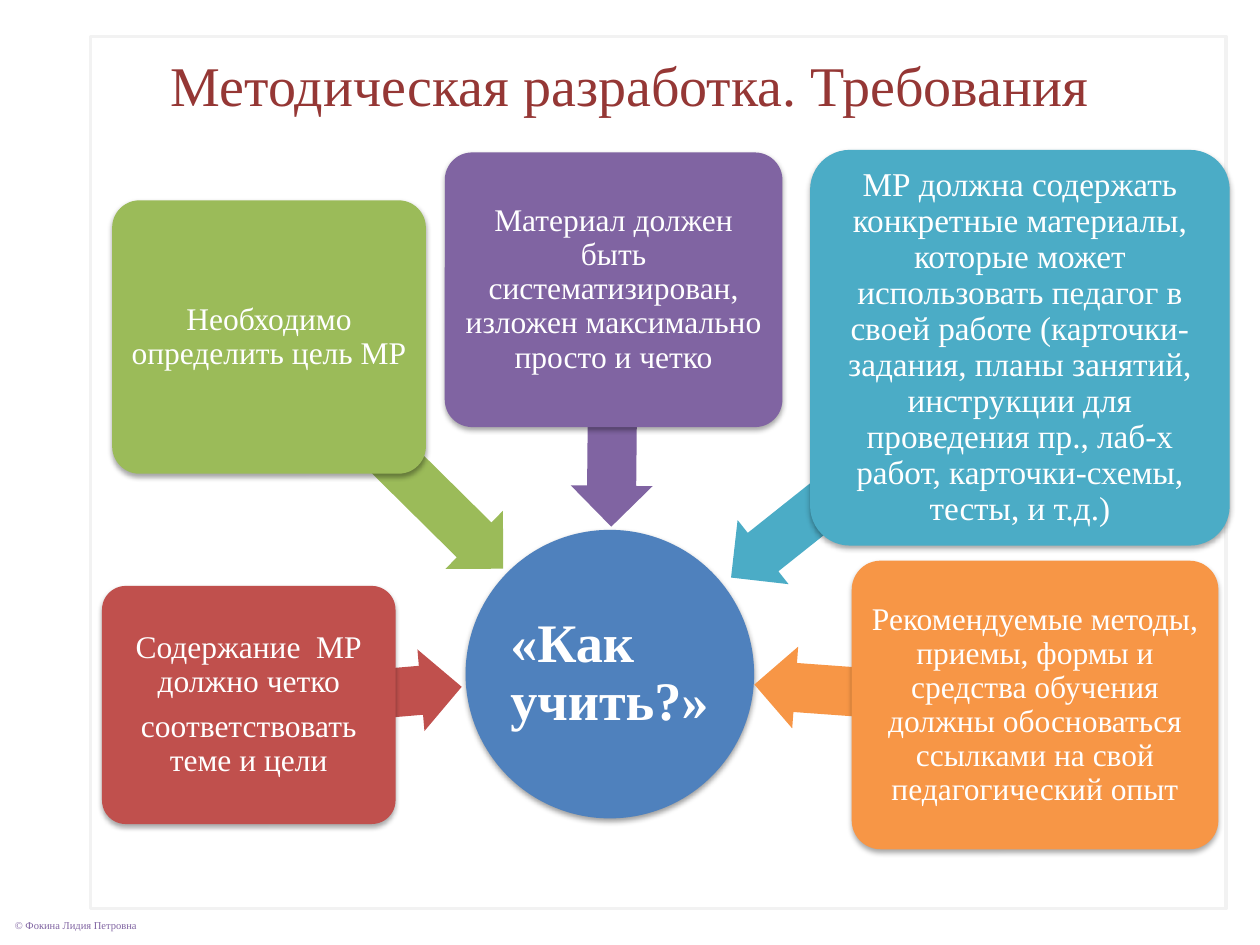
import math
from lxml import etree
from pptx import Presentation, util as u
from pptx.dml.color import RGBColor
from pptx.enum import shapes, text
from pptx.oxml.ns import qn

prs = Presentation()
prs.slide_width, prs.slide_height = u.Inches(10), u.Inches(7.5)
unit = prs.slide_width / 100
s = prs.slides.add_slide(prs.slide_layouts[5])
FONT = "Times New Roman"
WHITE = "FFFFFF"
GEO = shapes.MSO_SHAPE


def add_shape(kind, x, y, w, h, color, shadow=0):
    sp = s.shapes.add_shape(kind, *(round(v * unit) for v in (x, y, w, h)))
    sp.fill.solid()
    sp.fill.fore_color.rgb = RGBColor.from_string(color)
    sp.line.fill.background()
    sp.shadow.inherit = False
    if shadow:
        effects = sp._element.spPr.find(qn("a:effectLst"))
        outer = etree.SubElement(effects, qn("a:outerShdw"), blurRad=str(u.Pt(3.1)),
                                 dist=str(u.Pt(1.7)), dir="5400000", rotWithShape="0")
        black = etree.SubElement(outer, qn("a:srgbClr"), val="000000")
        etree.SubElement(black, qn("a:alpha"), val=str(shadow * 1000))
    return sp


def write(sp, paragraphs, size, color, align, inset, bold=False, spacing=None):
    tf = sp.text_frame
    tf.word_wrap = True
    tf.vertical_anchor = text.MSO_ANCHOR.MIDDLE
    tf.margin_left = tf.margin_right = tf.margin_top = tf.margin_bottom = u.Inches(inset)
    tf.text = "\n".join(paragraphs)
    for p in tf.paragraphs:
        p.alignment = align
        p.line_spacing = spacing
        p.space_after = u.Pt(size * 0.35) if spacing else None
        p.font.name, p.font.size, p.font.bold = FONT, u.Pt(size), bold
        p.font.color.rgb = RGBColor.from_string(color)
    return tf


LEFT, CENTER = text.PP_ALIGN.LEFT, text.PP_ALIGN.CENTER

frame = add_shape(GEO.RECTANGLE, 7.2, 2.9, 90.1, 69.2, WHITE)
frame.line.color.rgb = RGBColor.from_string("F2F2F2")
frame.line.width = u.Pt(2)
fill = frame._element.spPr.find(qn("a:solidFill"))
etree.SubElement(fill[0], qn("a:alpha"), val="70000")
s.shapes._spTree.insert(2, frame._element)

title = s.shapes.title
title.left, title.top, title.width, title.height = (round(v * unit) for v in (5, 3, 90, 12.5))
tf = write(title, ["Методическая разработка. Требования"], 32, "953735", CENTER, 0.1)
tf.vertical_anchor = text.MSO_ANCHOR.TOP

credit = s.shapes.add_textbox(*(round(v * unit) for v in (0.2, 72.4, 12, 2)))
tf = write(credit, ["© Фокина Лидия Петровна"], 6, "8064A2", LEFT, 0.1)
tf.margin_top = tf.margin_bottom = u.Inches(0.05)
tf.word_wrap = False

hub_x, hub_y, hub_d = 48.4, 53.5, 22.9
hub = add_shape(GEO.OVAL, hub_x - hub_d / 2, hub_y - hub_d / 2, hub_d, hub_d, "4F81BD", 38)
write(hub, ["«Как учить?»"], 31, WHITE, LEFT, 0.02, True, 0.9)

requirements = [
    ("C0504D", (8.1, 46.5, 23.3, 18.9), 11.8, 16.3, 18,
     ["Содержание  МР должно четко", "соответствовать теме и цели"]),
    ("9BBB59", (8.9, 15.9, 24.9, 21.7), 11.9, 25.1, 18,
     ["Необходимо определить цель МР"]),
    ("8064A2", (35.3, 12.1, 26.8, 21.8), 11.7, 17.9, 18,
     ["Материал должен быть систематизирован, изложен максимально просто и четко"]),
    ("4BACC6", (64.3, 11.9, 33.3, 31.4), 12.3, 28.5, 19,
     ["МР должна содержать конкретные материалы, которые может использовать педагог "
      "в своей работе (карточки-задания, планы занятий, инструкции для проведения пр., "
      "лаб-х работ, карточки-схемы, тесты, и т.д.)"]),
    ("F79646", (67.6, 44.5, 29.1, 22.9), 11.5, 21.2, 18,
     ["Рекомендуемые методы, приемы, формы и средства обучения должны обосноваться "
      "ссылками на свой педагогический опыт"]),
]
arrow_h = 6.5
for color, (x, y, w, h), tip, length, size, paragraphs in requirements:
    angle = math.atan2(y + h / 2 - hub_y, x + w / 2 - hub_x)
    reach = tip + length / 2
    arrow = add_shape(GEO.LEFT_ARROW, hub_x + reach * math.cos(angle) - length / 2,
                      hub_y + reach * math.sin(angle) - arrow_h / 2, length, arrow_h, color)
    arrow.adjustments[0], arrow.adjustments[1] = 0.6, 0.5
    arrow.rotation = math.degrees(angle) % 360
    box = add_shape(GEO.ROUNDED_RECTANGLE, x, y, w, h, color, 35)
    box.adjustments[0] = 0.1
    write(box, paragraphs, size, WHITE, CENTER, 0.04, spacing=0.9)

prs.save("out.pptx")
